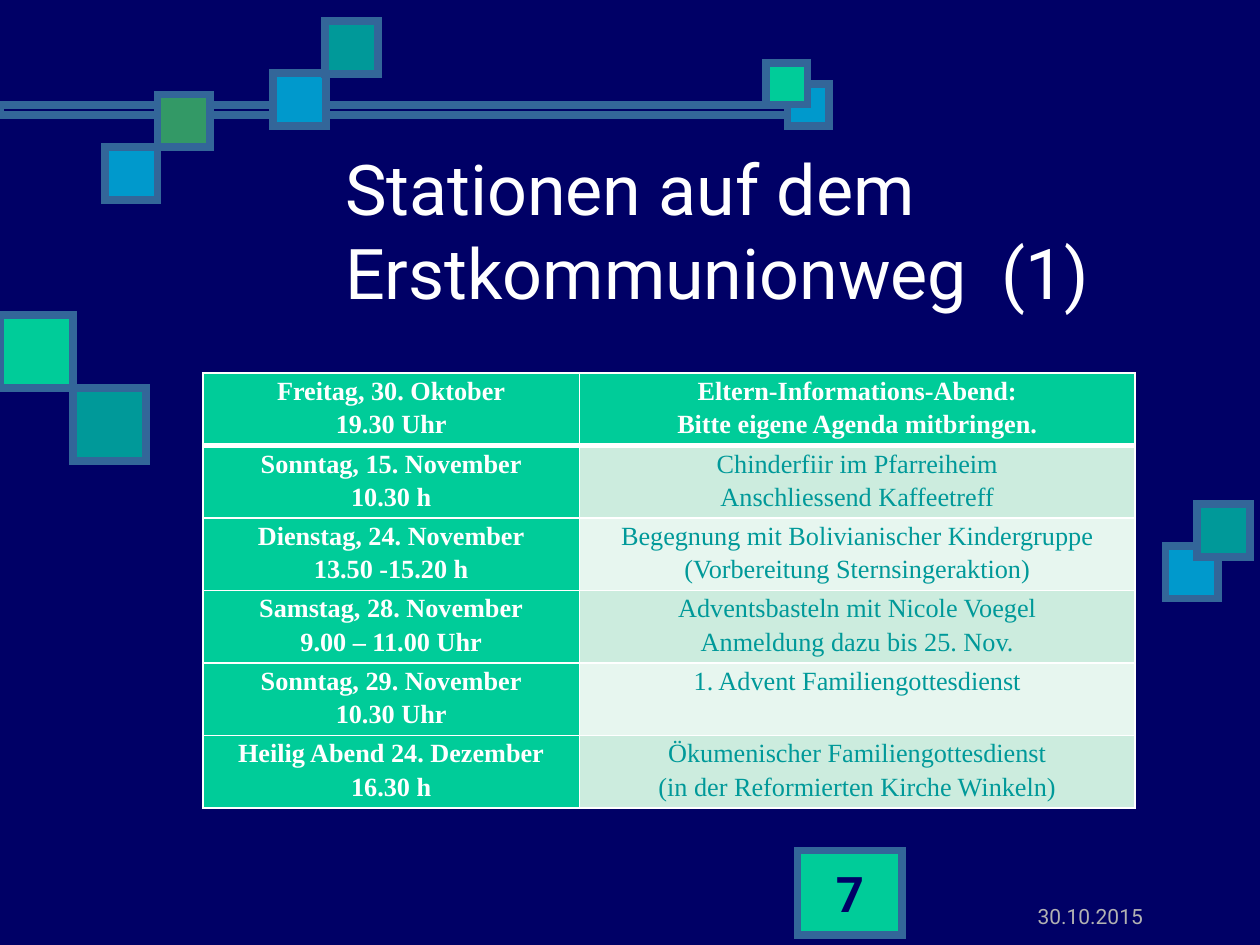
from typing import NamedTuple

from lxml import etree
from pptx import Presentation
from pptx import util as u
from pptx.dml.color import RGBColor
from pptx.enum import shapes, text
from pptx.oxml import parse_xml
from pptx.oxml.ns import nsdecls, qn

COLORS = {
    "navy": "000066", "frame": "336699", "blue": "0099CC", "mint": "00CC99",
    "teal": "009999", "green": "339966", "white": "FFFFFF", "gray": "B2B2B2",
    "band_dark": "CCECDE", "band_light": "E7F6EF",
}
SANS, SERIF = "Roboto", "Times New Roman"
ROW_HEIGHT = 0.53


class Square(NamedTuple):
    left: float
    top: float
    size: float
    color: str


class Style(NamedTuple):
    font: str
    size: float
    color: str
    bold: bool = False


class Station(NamedTuple):
    date: str
    time: str
    event: tuple[str, ...]


SQUARES = [
    Square(6.25, 0.67, 0.33, "blue"),
    Square(6.08, 0.5, 0.33, "mint"),
    Square(9.25, 4.33, 0.42, "blue"),
    Square(9.5, 4, 0.42, "teal"),
    Square(0, 2.5, 0.58, "mint"),
    Square(0.58, 3.08, 0.58, "teal"),
    Square(2.17, 0.58, 0.42, "blue"),
    Square(0.83, 1.17, 0.42, "blue"),
    Square(1.25, 0.75, 0.42, "green"),
    Square(2.58, 0.17, 0.42, "teal"),
]

STATIONS = [
    Station("Freitag, 30. Oktober", "19.30 Uhr",
            ("Eltern-Informations-Abend:", "Bitte eigene Agenda mitbringen.")),
    Station("Sonntag, 15. November", "10.30 h",
            ("Chinderfiir im Pfarreiheim", "Anschliessend Kaffeetreff")),
    Station("Dienstag, 24. November", "13.50 -15.20 h",
            ("Begegnung mit Bolivianischer Kindergruppe",
             "(Vorbereitung Sternsingeraktion)")),
    Station("Samstag, 28. November", "9.00 – 11.00 Uhr",
            ("Adventsbasteln mit Nicole Voegel", "Anmeldung dazu bis 25. Nov.")),
    Station("Sonntag, 29. November", "10.30 Uhr",
            ("1. Advent Familiengottesdienst",)),
    Station("Heilig Abend 24. Dezember", "16.30 h",
            ("Ökumenischer Familiengottesdienst",
             "(in der Reformierten Kirche Winkeln)")),
]


def rgb(name: str) -> RGBColor:
    return RGBColor.from_string(COLORS[name])


def write(frame, lines: tuple[str, ...], style: Style, align,
          spacing: float | None = None) -> None:
    for index, line in enumerate(lines):
        para = frame.add_paragraph() if index else frame.paragraphs[0]
        para.alignment = align
        if spacing:
            para.line_spacing = spacing
        span = para.add_run()
        span.text = line
        span.font.name = style.font
        span.font.size = u.Pt(style.size)
        span.font.bold = style.bold
        span.font.color.rgb = rgb(style.color)


def add_framed_box(page, left: float, top: float, width: float, height: float,
                   color: str | None = None):
    """Draw a rectangle with the thick sharp-cornered frame; no color means hollow."""
    box = page.shapes.add_shape(shapes.MSO_SHAPE.RECTANGLE, u.Inches(left),
                                u.Inches(top), u.Inches(width), u.Inches(height))
    box.shadow.inherit = False
    if color:
        box.fill.solid()
        box.fill.fore_color.rgb = rgb(color)
    else:
        box.fill.background()
    box.line.color.rgb = rgb("frame")
    box.line.width = u.Pt(4.5)
    etree.SubElement(box.line._get_or_add_ln(), qn("a:miter"), lim="800000")
    return box


def add_text(page, left: float, top: float, width: float, height: float,
             line: str, style: Style, align, anchor) -> None:
    box = page.shapes.add_textbox(u.Inches(left), u.Inches(top),
                                  u.Inches(width), u.Inches(height))
    box.text_frame.word_wrap = True
    box.text_frame.vertical_anchor = anchor
    write(box.text_frame, (line,), style, align)


def set_borders(cell, top: float, bottom: float) -> None:
    """Give the cell white borders; top and bottom widths are in points."""
    widths = {"L": 1, "R": 1, "T": top, "B": bottom}
    properties = cell._tc.get_or_add_tcPr()
    for index, (side, width) in enumerate(widths.items()):
        properties.insert(index, parse_xml(
            f'<a:ln{side} {nsdecls("a")} w="{u.Pt(width)}"><a:solidFill>'
            f'<a:srgbClr val="{COLORS["white"]}"/></a:solidFill></a:ln{side}>'))


def fill_cell(cell, lines: tuple[str, ...], fill: str, color: str, bold: bool) -> None:
    cell.margin_left = cell.margin_right = u.Inches(0.07)
    cell.margin_top = cell.margin_bottom = 0
    cell.fill.solid()
    cell.fill.fore_color.rgb = rgb(fill)
    write(cell.text_frame, lines, Style(SERIF, 15, color, bold),
          text.PP_ALIGN.CENTER, 1.15)


def add_station_table(page) -> None:
    table = page.shapes.add_table(
        len(STATIONS), 2, u.Inches(1.61), u.Inches(2.96), u.Inches(7.4),
        u.Inches(ROW_HEIGHT * len(STATIONS))).table
    for column, width in zip(table.columns, (2.99, 4.41)):
        column.width = u.Inches(width)
    for index, station in enumerate(STATIONS):
        table.rows[index].height = u.Inches(ROW_HEIGHT)
        date, event = table.cell(index, 0), table.cell(index, 1)
        fill_cell(date, (station.date, station.time), "mint", "white", True)
        if index == 0:
            fill_cell(event, station.event, "mint", "white", True)
        else:
            band = "band_dark" if index % 2 else "band_light"
            fill_cell(event, station.event, band, "teal", False)
        for cell in (date, event):
            set_borders(cell, top=3 if index == 1 else 1, bottom=3 if index == 0 else 1)


def main() -> None:
    deck = Presentation()
    deck.slide_width, deck.slide_height = u.Inches(10), u.Inches(7.5)
    page = deck.slides.add_slide(deck.slide_layouts[6])
    page.background.fill.solid()
    page.background.fill.fore_color.rgb = rgb("navy")

    add_framed_box(page, 0, 0.83, 6.42, 0.08)
    for square in SQUARES:
        add_framed_box(page, square.left, square.top, square.size, square.size,
                       square.color)

    add_text(page, 2.64, 1.03, 6.81, 1.58, "Stationen auf dem Erstkommunionweg  (1)",
             Style(SANS, 40, "white"), text.PP_ALIGN.LEFT, text.MSO_ANCHOR.MIDDLE)
    add_station_table(page)
    add_text(page, 7.17, 7.12, 2, 0.3, "30.10.2015", Style(SANS, 12, "gray"),
             text.PP_ALIGN.RIGHT, text.MSO_ANCHOR.BOTTOM)

    number = add_framed_box(page, 6.33, 6.75, 0.83, 0.67, "mint").text_frame
    number.word_wrap = False
    number.vertical_anchor = text.MSO_ANCHOR.MIDDLE
    write(number, ("7",), Style(SANS, 28, "navy", True), text.PP_ALIGN.CENTER)

    deck.save("out.pptx")


if __name__ == "__main__":
    main()
